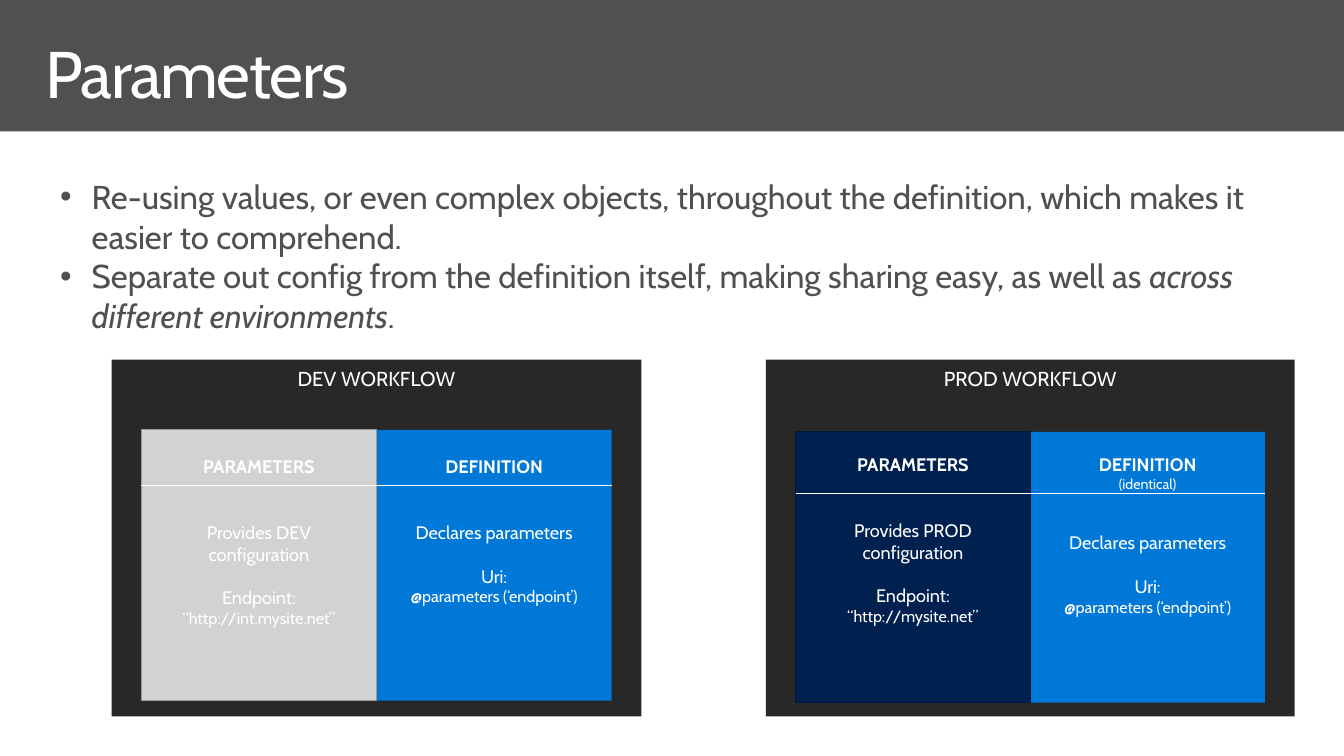
import pptx
import pptx.util
import pptx.dml.color
import pptx.enum.shapes
import pptx.enum.text
import pptx.oxml.ns
import lxml.etree

Inches = pptx.util.Inches
Pt = pptx.util.Pt
RGBColor = pptx.dml.color.RGBColor
Align = pptx.enum.text.PP_ALIGN

WHITE = RGBColor(0xFF, 0xFF, 0xFF)
GRAY = RGBColor(0x50, 0x50, 0x50)
DARK = RGBColor(0x28, 0x28, 0x28)
BLUE = RGBColor(0x00, 0x78, 0xD7)
SILVER = RGBColor(0xD2, 0xD2, 0xD2)
STEEL = RGBColor(0x9B, 0x9B, 0x9B)
NAVY = RGBColor(0x00, 0x20, 0x50)
INK = RGBColor(0x00, 0x18, 0x3B)

CALL = "@parameters (‘endpoint’)"


def add_tag(parent, name, **attrs):
    return lxml.etree.SubElement(parent, pptx.oxml.ns.qn(name), attrs)


def write(frame, text, size=13.2, color=WHITE, bold=False, italic=False,
          align=Align.CENTER, before=0, first=False, join=False):
    if first:
        para = frame.paragraphs[0]
    elif join:
        para = frame.paragraphs[-1]
    else:
        para = frame.add_paragraph()
    para.alignment = align
    if not join:
        para.space_before = Pt(before)
    run = para.add_run()
    run.text = text
    font = run.font
    font.name, font.size, font.color.rgb = "Cabin", Pt(size), color
    font.bold, font.italic = bold, italic
    return para


def set_frame(shape, left, top, right, bottom):
    frame = shape.text_frame
    frame.word_wrap = True
    frame.vertical_anchor = pptx.enum.text.MSO_ANCHOR.TOP
    frame.margin_left, frame.margin_top = Inches(left), Inches(top)
    frame.margin_right, frame.margin_bottom = Inches(right), Inches(bottom)
    return frame


def add_rect(slide, x, y, w, h, fill, edge=None):
    rect = slide.shapes.add_shape(
        pptx.enum.shapes.MSO_SHAPE.RECTANGLE,
        Inches(x), Inches(y), Inches(w), Inches(h))
    rect.shadow.inherit = False
    rect.fill.solid()
    rect.fill.fore_color.rgb = fill
    if edge is None:
        rect.line.fill.background()
    else:
        rect.line.color.rgb = edge
        rect.line.width = Pt(0.85)
    return rect


def add_rule(slide, x, y, w):
    rule = slide.shapes.add_connector(
        pptx.enum.shapes.MSO_CONNECTOR.STRAIGHT,
        Inches(x), Inches(y), Inches(x + w), Inches(y))
    rule.line.color.rgb = WHITE
    rule.line.width = Pt(0.75)
    add_tag(rule.element.spPr, "a:effectLst")


def add_title(slide, x, y, w, h):
    box = slide.shapes.add_textbox(Inches(x), Inches(y), Inches(w), Inches(h))
    frame = set_frame(box, 0.16, 0.1, 0.16, 0.1)
    para = write(frame, "Parameters", size=48, align=Align.LEFT, first=True)
    para.line_spacing = 0.9
    para.runs[0].font._element.set("spc", "-100")


def add_points(slide, x, y, w, h):
    box = slide.shapes.add_textbox(Inches(x), Inches(y), Inches(w), Inches(h))
    frame = set_frame(box, 0.1, 0.05, 0.1, 0.05)
    look = dict(size=24, color=GRAY, align=Align.LEFT)
    write(frame, "Re-using values, or even complex objects, throughout the "
          "definition, which makes it easier to comprehend.", first=True, **look)
    write(frame, "Separate out config from the definition itself, making "
          "sharing easy, as well as ", **look)
    write(frame, "across different environments", italic=True, join=True, **look)
    write(frame, ".", join=True, **look)
    for para in frame.paragraphs:
        props = para._p.get_or_add_pPr()
        props.set("marL", str(Inches(0.32)))
        props.set("indent", str(Inches(-0.32)))
        add_tag(props, "a:buFont", typeface="Arial")
        add_tag(props, "a:buChar", char="•")


def add_card(slide, x, y, w, h, fill, edge, top, head, note, lead, label, code):
    card = add_rect(slide, x, y, w, h, fill, edge)
    frame = set_frame(card, 0.15, top, 0.15, 0.05)
    write(frame, head, bold=True, first=True)
    if note:
        write(frame, note, size=10.3)
    write(frame, lead, before=28.5 if note else 32)
    write(frame, label, before=16)
    write(frame, code, size=11.8)


def add_flow(slide, x, y, w, h, name, fill, edge, site, note, drop, top, rule):
    panel = add_rect(slide, x, y, w, h, DARK)
    frame = set_frame(panel, 0.15, 0.07, 0.15, 0.05)
    write(frame, f"{name} WORKFLOW", size=14.7, first=True)
    pad, tall = 0.3, 2.74
    half = w / 2 - pad
    add_card(slide, x + w / 2, y + drop, half, tall, BLUE, None, top,
             "DEFINITION", note, "Declares parameters", "Uri:", CALL)
    add_card(slide, x + pad, y + drop, half, tall, fill, edge, top,
             "PARAMETERS", None, f"Provides {name} configuration",
             "Endpoint:", site)
    add_rule(slide, x + pad, y + rule, 2 * half)


def main():
    deck = pptx.Presentation()
    deck.slide_width, deck.slide_height = Inches(13.6), Inches(7.65)
    slide = deck.slides.add_slide(deck.slide_layouts[6])
    slide.background.fill.solid()
    slide.background.fill.fore_color.rgb = GRAY
    add_rect(slide, 0, 1.33, 13.6, 6.32, WHITE)
    add_title(slide, 0.3, 0.32, 13, 1)
    add_points(slide, 0.51, 1.74, 12.58, 1.72)
    add_flow(slide, 1.13, 3.64, 5.36, 3.61, "DEV", SILVER, STEEL,
             "“http://int.mysite.net”", None, 0.71, 0.26, 1.27)
    add_flow(slide, 7.75, 3.64, 5.35, 3.61, "PROD", NAVY, INK,
             "“http://mysite.net”", "(identical)", 0.73, 0.22, 1.35)
    deck.save("out.pptx")


if __name__ == "__main__":
    main()
